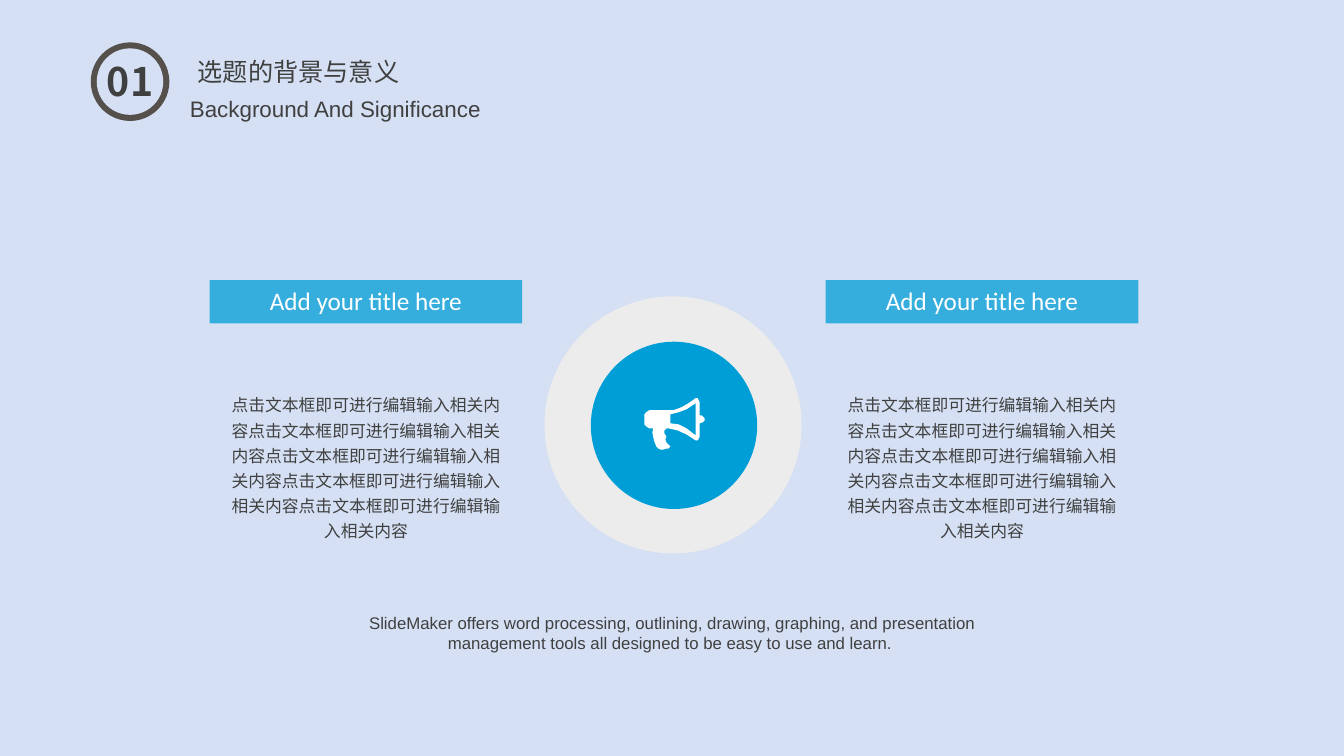
from lxml import etree
from pptx import Presentation
from pptx.dml.color import RGBColor
from pptx.enum.shapes import MSO_SHAPE
from pptx.enum.text import MSO_ANCHOR, MSO_AUTO_SIZE, PP_ALIGN
from pptx.oxml.ns import qn
from pptx.util import Inches, Pt

OVAL, RECT = MSO_SHAPE.OVAL, MSO_SHAPE.RECTANGLE
LEFT, MID = PP_ALIGN.LEFT, PP_ALIGN.CENTER
TOP, FIXED = MSO_ANCHOR.TOP, MSO_AUTO_SIZE.NONE
SKY = RGBColor(0xD5, 0xE0, 0xF4)
BROWN = RGBColor(0x56, 0x50, 0x4C)
DARK = RGBColor(0x40, 0x40, 0x40)
PALE = RGBColor(0xEC, 0xEC, 0xEC)
BLUE = RGBColor(0x00, 0x9E, 0xD6)
WHITE = RGBColor(0xFF, 0xFF, 0xFF)
HAN = "Noto Sans CJK SC"

HEAD = "选题的背景与意义"
SUB = " Background And Significance"
LABEL = "Add your title here"
BODY = "点击文本框即可进行编辑输入相关内容" * 5
NOTE = ("SlideMaker offers word processing, outlining, drawing, graphing, and "
        "presentation management tools all designed to be easy to use and learn. ")

BADGE = [((0.9, 0.42, 0.78, 0.78), BROWN), ((0.96, 0.48, 0.66, 0.66), SKY)]
DISCS = [((5.4, 2.94, 2.55, 2.55), PALE), ((5.86, 3.39, 1.65, 1.66), BLUE)]
COLS = [2.08, 8.19]
BAR_W = 3.1

HORN_AT = (6.39, 3.95)
HORN = [
    [(58, 18), (57, 17), (55, 17), (55, 4), (54.5, 1.5), (53, 0.5), (51, 0),
     (44, 5), (37, 9), (29, 11.5), (21, 12.5), (5, 12.5), (2, 13.5),
     (0.5, 15.5), (0, 18), (0, 24), (0.5, 26.5), (2, 28.5), (5, 29.5),
     (9, 29.5), (8.5, 34), (9, 39), (10, 43), (12, 48.5), (13.5, 50),
     (16, 51), (19, 51), (22, 50.5), (24.5, 49.5), (26, 47.5), (23.5, 46),
     (21.5, 43.5), (21, 41), (21.5, 38.5), (20.5, 35), (20.5, 32),
     (21.5, 30.5), (24, 29.5), (33, 31.5), (42, 35.5), (51, 42),
     (53, 41.5), (54.5, 40), (55, 38), (55, 25), (58, 24), (59.5, 22.5),
     (60, 21), (59.5, 19.5)],
    [(51, 37), (42, 30.5), (34, 26.5), (26, 25), (26, 16), (34, 14),
     (42, 11), (51, 5)],
]

BASE = {"word_wrap": True, "auto_size": FIXED, "vertical_anchor": TOP}
BARE = {f"margin_{side}": 0 for side in ("left", "right", "top", "bottom")}


def paint(shape, color, alpha=None):
    shape.shadow.inherit = False
    shape.line.fill.background()
    shape.fill.solid()
    shape.fill.fore_color.rgb = color
    if alpha:
        tone = shape._element.spPr.find(qn("a:solidFill"))[0]
        etree.SubElement(tone, qn("a:alpha")).set("val", str(alpha * 1000))


def disc(shapes, box, color):
    paint(shapes.add_shape(OVAL, *map(Inches, box)), color)


def write(shape, text, size, font, color=DARK, bold=False, align=MID,
          space=None, **frame):
    area = shape.text_frame
    for key, val in (BASE | frame).items():
        setattr(area, key, val)
    para = area.paragraphs[0]
    run = para.add_run()
    run.text = text
    para.alignment = align
    if space:
        para.line_spacing = space
    for key, val in {"size": Pt(size), "bold": bold, "name": font}.items():
        setattr(run.font, key, val)
    run.font.color.rgb = color
    etree.SubElement(run._r.get_or_add_rPr(), qn("a:ea")).set("typeface", font)


def draw_horn(shapes):
    x, y = map(Inches, HORN_AT)
    pen = None
    for ring in HORN:
        if pen is None:
            pen = shapes.build_freeform(*ring[0], scale=Inches(0.01))
        else:
            pen.move_to(*ring[0])
        pen.add_line_segments(ring[1:], close=True)
    paint(pen.convert_to_shape(x, y), WHITE)


def main():
    deck = Presentation()
    deck.slide_width, deck.slide_height = Inches(13.33), Inches(7.5)
    slide = deck.slides.add_slide(deck.slide_layouts[5])
    slide.background.fill.solid()
    slide.background.fill.fore_color.rgb = SKY
    shapes = slide.shapes

    def label(box, *args, **style):
        write(shapes.add_textbox(*map(Inches, box)), *args, **style)

    for box, color in BADGE:
        disc(shapes, box, color)
    label((0.93, 0.52, 0.72, 0.57), "01", 28, HAN, bold=True)

    title = shapes.title
    spot = dict(left=1.86, top=0.21, width=2.22, height=0.71)
    for key, val in spot.items():
        setattr(title, key, Inches(val))
    write(title, HEAD, 18, HAN, align=LEFT, space=2.0, word_wrap=False)
    label((0.55, 0.89, 5.49, 0.37), SUB, 16, "Arial")

    icon = shapes.add_group_shape().shapes
    for box, color in DISCS:
        disc(icon, box, color)
    draw_horn(icon)

    for x in COLS:
        bar = shapes.add_shape(RECT, *map(Inches, (x, 2.78, BAR_W, 0.43)))
        paint(bar, BLUE, 75)
        label((x + 0.43, 2.78, BAR_W - 0.86, 0.4), LABEL, 18, "Calibri", WHITE)
        label((x + 0.09, 3.82, BAR_W - 0.18, 1.62), BODY, 12, HAN, space=1.25)

    label((3.16, 6.08, 7.02, 0.4), NOTE, 12, "Arial", **BARE)
    deck.save("out.pptx")


if __name__ == "__main__":
    main()
